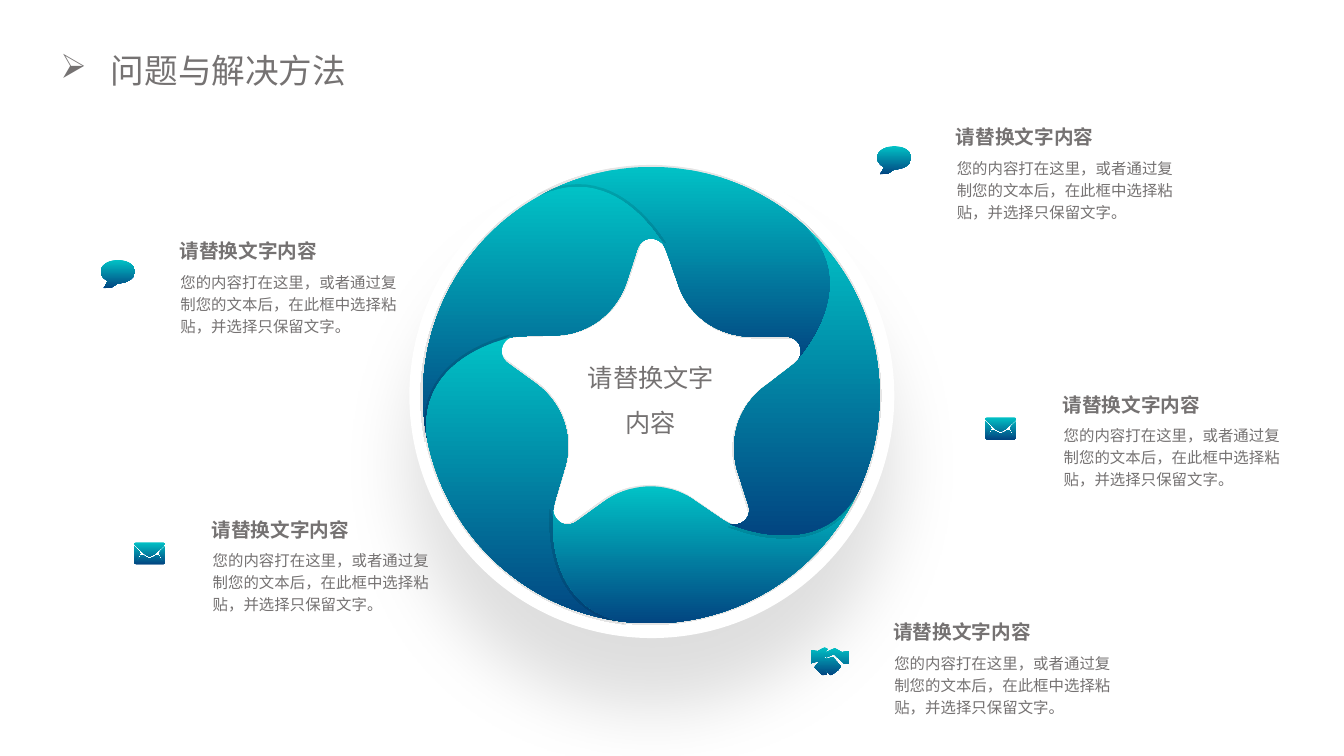
import math

from lxml import etree
from pptx import Presentation
from pptx import util as u
from pptx.dml.color import RGBColor
from pptx.enum import shapes, text
from pptx.oxml.ns import qn

PX = 9144  # EMU per px, 100 px to the inch
FONT = "Noto Sans CJK SC"
GREY = RGBColor(0x75, 0x72, 0x72)
WHITE = RGBColor(0xFF, 0xFF, 0xFF)
TEAL = RGBColor(0x01, 0xC2, 0xC6)
NAVY = RGBColor(0x02, 0x45, 0x81)

HEADING = "请替换文字内容"
BODY = "您的内容打在这里，或者通过复制您的文本后，在此框中选择粘贴，并选择只保留文字。"
ITEMS = [
    (165, 237, "bubble"),
    (197, 513, "envelope"),
    (873, 615, "handshake"),
    (1041, 389, "envelope"),
    (935, 124, "bubble"),
]


def bezier(*ctrl, steps=20):
    """Points along a cubic curve."""
    points = []
    for i in range(steps + 1):
        t = i / steps
        weights = ((1 - t) ** 3, 3 * t * (1 - t) ** 2, 3 * t * t * (1 - t), t ** 3)
        points.append(tuple(sum(w * c[k] for w, c in zip(weights, ctrl)) for k in (0, 1)))
    return points


def turn(point, fifths):
    """Rotate a point about the wheel centre by fifths of a turn."""
    x, y = point
    cos, sin = math.cos(math.tau * fifths / 5), math.sin(math.tau * fifths / 5)
    return x * cos + y * sin, y * cos - x * sin


def petal_points():
    """Star tip and bay, leading edge, rim arc, trailing edge."""
    tip, rim = (146, -35), (154, -166)
    edge = bezier(tip, (160, -52), (205, -113), rim)
    inner = bezier(tip, (152, -46), (146, -58), (133, -58))
    inner += bezier((100, -58), (66, -58), (36, -79), (26, -112))
    inner.append((15, -143))
    arc = [turn(rim, 1 - i / 40) for i in range(41)]
    return inner + [turn(p, 1) for p in edge] + arc + edge[::-1]


def bubble_points():
    """An ellipse left open at the lower left for its tail."""
    angles = [math.radians(90 - 9 * i) for i in range(37)]
    oval = [(17 + 17 * math.cos(a), 11.5 + 11.5 * math.sin(a)) for a in angles]
    return [oval + [(3, 28), (11, 27)]]


def envelope_points():
    """Flap and body, each a left half mirrored to the right."""
    flap = [(15, 14), (11, 12), (1, 3), (0, 1), (2, 0)]
    body = [(15, 16), (12, 15), (9, 13), (7, 13), (3, 19), (2, 19),
            (6, 11), (5, 9), (0, 4), (0, 20), (2, 22)]
    return [half + [(31 - x, y) for x, y in half[::-1]] for half in (flap, body)]


def handshake_points():
    """Right hand, fingertips, left hand."""
    return [
        [(38, 4), (38, 16), (33, 16), (23, 7), (16, 10), (12, 9), (13, 6), (24, 1), (31, 5)],
        [(15, 24), (10, 18), (7, 16), (4, 20), (12, 28), (16, 27)],
        [(30, 19), (22, 10), (15, 12), (11, 8), (17, 2), (14, 0), (7, 4),
         (0, 3), (0, 16), (7, 14), (17, 25), (20, 28), (27, 23)],
    ]


# Icon offset from the item's top left, and its outlines
ICONS = {
    "bubble": (-65, 21, bubble_points()),
    "envelope": (-64, 25, envelope_points()),
    "handshake": (-69, 27, handshake_points()),
}


def add_outline(s, x, y, contours):
    """Draw closed contours, offset by x and y, with the teal to navy gradient."""
    builder = None
    for points in contours:
        emu = [((x + a) * PX, (y + b) * PX) for a, b in points]
        if builder is None:
            builder = s.shapes.build_freeform(*emu[0], scale=1.0)
        else:
            builder.move_to(*emu[0])
        builder.add_line_segments(emu[1:], close=True)
    sp = builder.convert_to_shape()
    sp.shadow.inherit = False
    sp.line.fill.background()
    sp.fill.gradient()
    sp.fill.gradient_angle = 270
    for stop, pos, color in zip(sp.fill.gradient_stops, (0, 1), (TEAL, NAVY)):
        stop.position = pos
        stop.color.rgb = color
    return sp


def add_shadow(sp, alpha, **attrs):
    sp.shadow.inherit = False
    effects = sp._element.spPr.find(qn("a:effectLst"))
    shadow = etree.SubElement(effects, qn("a:outerShdw"), {k: str(v) for k, v in attrs.items()})
    color = etree.SubElement(shadow, qn("a:srgbClr"), val="000000")
    etree.SubElement(color, qn("a:alpha"), val=str(alpha * 1000))


def add_text(s, box, words, size, inset=(0, 0), bold=False, align=None, spacing=None, **frame):
    tf = s.shapes.add_textbox(*(v * PX for v in box)).text_frame
    dx, dy = (v * PX for v in inset)
    frame = {"word_wrap": True, "margin_left": dx, "margin_right": dx,
             "margin_top": dy, "margin_bottom": dy, **frame}
    for name, value in frame.items():
        setattr(tf, name, value)
    p = tf.paragraphs[0]
    p.alignment, p.line_spacing = align, spacing
    r = p.add_run()
    r.text = words
    r.font.color.rgb = GREY
    for name, value in {"size": u.Pt(size), "bold": bold, "name": FONT}.items():
        setattr(r.font, name, value)
    etree.SubElement(r._r.get_or_add_rPr(), qn("a:ea"), typeface=FONT)
    return p


def add_title(s, x, y, w, h):
    p = add_text(s, (x, y, w, h), "问题与解决方法", 24,
                 vertical_anchor=text.MSO_ANCHOR.MIDDLE,
                 auto_size=text.MSO_AUTO_SIZE.SHAPE_TO_FIT_TEXT)
    pPr = p._p.get_or_add_pPr()
    pPr.set("marL", str(50 * PX))
    pPr.set("indent", str(-50 * PX))
    etree.SubElement(pPr, qn("a:buChar"), char="➢")


def add_wheel(s, x, y, size):
    # White disc
    sp = s.shapes.add_shape(shapes.MSO_SHAPE.OVAL, *(v * PX for v in (x, y, size, size)))
    sp.fill.solid()
    sp.fill.fore_color.rgb = WHITE
    sp.line.fill.background()
    add_shadow(sp, 12, blurRad=u.Pt(50), dist=u.Pt(50), dir=5400000, algn="t", rotWithShape=0)
    # Centre label
    cx, cy = x + size // 2, y + size // 2
    add_text(s, (cx - 70, cy - 26, 139, 46), HEADING, 18, spacing=1.5,
             align=text.PP_ALIGN.CENTER, vertical_anchor=text.MSO_ANCHOR.MIDDLE)
    # Five petals, each a fifth of a turn further
    for i in range(5):
        petal = [turn(p, i) for p in petal_points()]
        add_shadow(add_outline(s, cx, cy, [petal]), 10,
                   sx=102000, sy=102000, algn="ctr", rotWithShape=0)


def add_item(s, x, y, icon):
    grow = text.MSO_AUTO_SIZE.SHAPE_TO_FIT_TEXT
    add_text(s, (x, y, 168, 24), HEADING, 14, (13, 0), bold=True, word_wrap=False,
             vertical_anchor=text.MSO_ANCHOR.MIDDLE, auto_size=grow)
    add_text(s, (x + 1, y + 23, 243, 80), BODY, 11, (13, 7), spacing=1.2, auto_size=grow)
    dx, dy, contours = ICONS[icon]
    add_outline(s, x + dx, y + dy, contours)


def main():
    prs = Presentation()
    prs.slide_width, prs.slide_height = 1333 * PX, 750 * PX
    s = prs.slides.add_slide(prs.slide_layouts[6])
    add_wheel(s, 406, 152, 481)
    for item in ITEMS:
        add_item(s, *item)
    add_title(s, 60, 50, 294, 40)
    prs.save("out.pptx")


if __name__ == "__main__":
    main()
